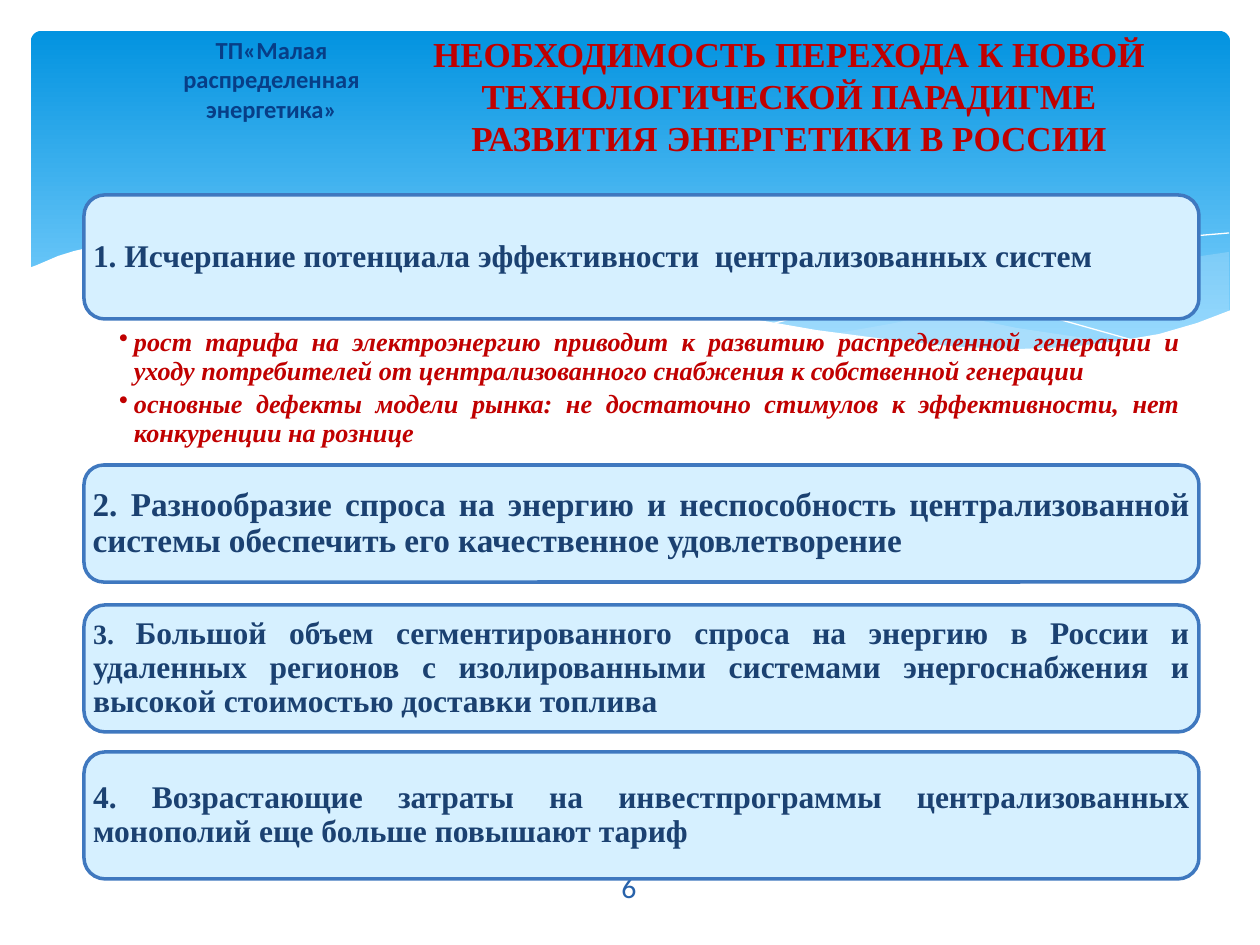
from lxml import etree
from pptx import Presentation
from pptx.dml.color import RGBColor
from pptx.enum.shapes import MSO_SHAPE
from pptx.enum.text import MSO_ANCHOR, PP_ALIGN
from pptx.oxml.ns import qn
from pptx.util import Emu, Pt

ROUND = MSO_SHAPE.ROUNDED_RECTANGLE
TOP, MIDDLE = MSO_ANCHOR.TOP, MSO_ANCHOR.MIDDLE
CENTER, JUSTIFY = PP_ALIGN.CENTER, PP_ALIGN.JUSTIFY
SCALE = 914400 / 126
SERIF, SANS = "Times New Roman", "Calibri"
RED, NAVY, WHITE = "C00000", "1B4171", "FFFFFF"

# Wave outlines, in px of the slide
RIGHT = [(1229, 252), (1195, 257), (1142, 268), (1085, 281), (982, 305), (890, 324),
         (833, 334), (871, 339), (922, 345), (969, 348), (1012, 350), (1051, 349),
         (1087, 348), (1120, 345), (1150, 340), (1177, 334), (1213, 324), (1229, 311)]
MID = [(1125, 344), (1091, 339), (1017, 328), (934, 311), (842, 291), (793, 280),
       (736, 266), (699, 259), (648, 249), (586, 241), (529, 236), (479, 233),
       (433, 234), (394, 237), (360, 241), (407, 247), (456, 256), (509, 266),
       (566, 280), (668, 302), (757, 321), (819, 333), (876, 341), (927, 346),
       (973, 349), (1017, 350), (1056, 350), (1092, 348)]
CREST = [(389, 246), (413, 242), (457, 238), (505, 236), (567, 237), (643, 242),
         (733, 252), (801, 262), (876, 276), (958, 294), (1047, 316), (1143, 343)]
RISE = [(772, 324), (823, 310), (876, 296), (942, 281), (1016, 265), (1091, 251),
        (1146, 242), (1182, 237), (1229, 233)]
MASK = [(1231, 310), (1197, 323), (1159, 334), (1118, 341), (1071, 347), (1019, 349),
        (959, 347), (892, 340), (816, 330), (730, 315), (634, 294), (563, 277),
        (493, 261), (428, 248), (368, 239), (315, 234), (266, 232), (223, 232),
        (184, 233), (150, 236), (120, 241), (96, 246), (74, 251), (58, 256),
        (37, 265), (29, 268), (29, 415), (1231, 415)]

CARDS = [
    (195, 124, [("1. Исчерпание потенциала эффективности  централизованных систем", 18)]),
    (465, 117, [("2. Разнообразие спроса на энергию и неспособность централизованной "
                 "системы обеспечить его качественное удовлетворение", 19)]),
    (605, 127, [("3. ", 16),
                ("Большой объем сегментированного спроса на энергию в России и удаленных "
                 "регионов с изолированными системами энергоснабжения и высокой "
                 "стоимостью доставки топлива", 18)]),
    (752, 127, [("4. Возрастающие затраты на инвестпрограммы централизованных монополий "
                 "еще больше повышают тариф", 18)]),
]
POINTS = [
    "рост тарифа на электроэнергию приводит к развитию распределенной генерации и уходу "
    "потребителей от централизованного снабжения к собственной генерации",
    "основные дефекты модели рынка: не достаточно стимулов к эффективности, "
    "нет конкуренции на рознице",
]


def px(n):
    return Emu(round(n * SCALE))


def color(code):
    return RGBColor.from_string(code)


def style(para, face, size, code, bold=True, align=CENTER):
    para.alignment = align
    font = para.font
    font.name, font.size, font.bold = face, Pt(size), bold
    font.color.rgb = color(code)


def frame(shape, side, edge, anchor):
    """Set wrapping, side and top/bottom insets, and anchor."""
    text = shape.text_frame
    text.word_wrap = True
    text.margin_left = text.margin_right = px(side)
    text.margin_top = text.margin_bottom = px(edge)
    text.vertical_anchor = anchor
    return text


def label(shapes, box, words, face, size, code, bold=True, anchor=TOP):
    text = frame(shapes.add_textbox(*map(px, box)), 13, 6, anchor)
    text.text = words
    style(text.paragraphs[0], face, size, code, bold)


def curve(shapes, dots, fill=None, alpha=100):
    """Draw a filled outline, or an open white hairline when no fill is given."""
    pen = shapes.build_freeform(*dots[0], scale=SCALE)
    pen.add_line_segments(dots[1:], close=fill is not None)
    shape = pen.convert_to_shape()
    shape.shadow.inherit = False
    if fill is None:
        shape.fill.background()
        shape.line.color.rgb = color(WHITE)
        shape.line.width = 0
        return
    shape.line.fill.background()
    shape.fill.solid()
    shape.fill.fore_color.rgb = color(fill)
    if alpha < 100:
        tint = shape.fill._xPr.find(".//" + qn("a:srgbClr"))
        etree.SubElement(tint, qn("a:alpha"), val=str(alpha * 1000))


def banner(shapes, box):
    shape = shapes.add_shape(ROUND, *map(px, box))
    shape.adjustments[0] = 0.03
    shape.shadow.inherit = False
    shape.line.fill.background()
    shape.fill.gradient()
    shape.fill.gradient_angle = 270
    for stop, (pos, code) in zip(shape.fill.gradient_stops, [(0, "0293E0"), (0.9, "83D3FE")]):
        stop.position = pos
        stop.color.rgb = color(code)
    curve(shapes, RIGHT, "C6E7FC", 29)
    curve(shapes, MID, "C6E7FC", 40)
    curve(shapes, CREST)
    curve(shapes, RISE)
    curve(shapes, MASK, WHITE)


def heading(shapes, box, words):
    title = shapes.title
    shapes._spTree.append(title._element)  # bring in front of the banner
    title.left, title.top, title.width, title.height = map(px, box)
    text = frame(title, 13, 6, TOP)
    text.text = words
    style(text.paragraphs[0], SERIF, 20, RED)


def card(shapes, box, runs):
    shape = shapes.add_shape(ROUND, *map(px, box))
    shape.shadow.inherit = False
    shape.fill.solid()
    shape.fill.fore_color.rgb = color("D6F0FF")
    shape.line.color.rgb = color("3F78BF")
    shape.line.width = Pt(2)
    para = frame(shape, 3, 3, MIDDLE).paragraphs[0]
    para.line_spacing = 0.9
    style(para, SERIF, runs[-1][1], NAVY, align=JUSTIFY)
    for words, size in runs:
        run = para.add_run()
        run.text = words
        if size != runs[-1][1]:
            run.font.size = Pt(size)


def bullets(shapes, box, items):
    text = frame(shapes.add_textbox(*map(px, box)), 19, 4, TOP)
    text.margin_left = px(35)
    text.text = "\n".join(items)
    for para in text.paragraphs:
        props = para._p.get_or_add_pPr()
        props.set("marL", str(px(15)))
        props.set("indent", str(px(-15)))
        etree.SubElement(props, qn("a:buChar"), char="•")
        para.line_spacing = 0.9
        para.space_after = Pt(3)
        style(para, SERIF, 15, RED, align=JUSTIFY)
        para.font.italic = True


def main():
    deck = Presentation()
    deck.slide_width, deck.slide_height = px(1260), px(945)
    shapes = deck.slides.add_slide(deck.slide_layouts[5]).shapes
    banner(shapes, (31, 31, 1199, 340))
    label(shapes, (549, 862, 160, 50), "6", SANS, 17, "2862AA", False, MIDDLE)
    label(shapes, (161, 29, 221, 102), "ТП«Малая распределенная энергетика»",
          SANS, 14, "073E87")
    heading(shapes, (392, 26, 794, 135),
            "НЕОБХОДИМОСТЬ ПЕРЕХОДА К НОВОЙ ТЕХНОЛОГИЧЕСКОЙ ПАРАДИГМЕ "
            "РАЗВИТИЯ ЭНЕРГЕТИКИ В РОССИИ")
    for top, height, runs in CARDS:
        card(shapes, (84, top, 1115, height), runs)
    bullets(shapes, (84, 325, 1115, 158), POINTS)
    deck.save("out.pptx")


if __name__ == "__main__":
    main()
